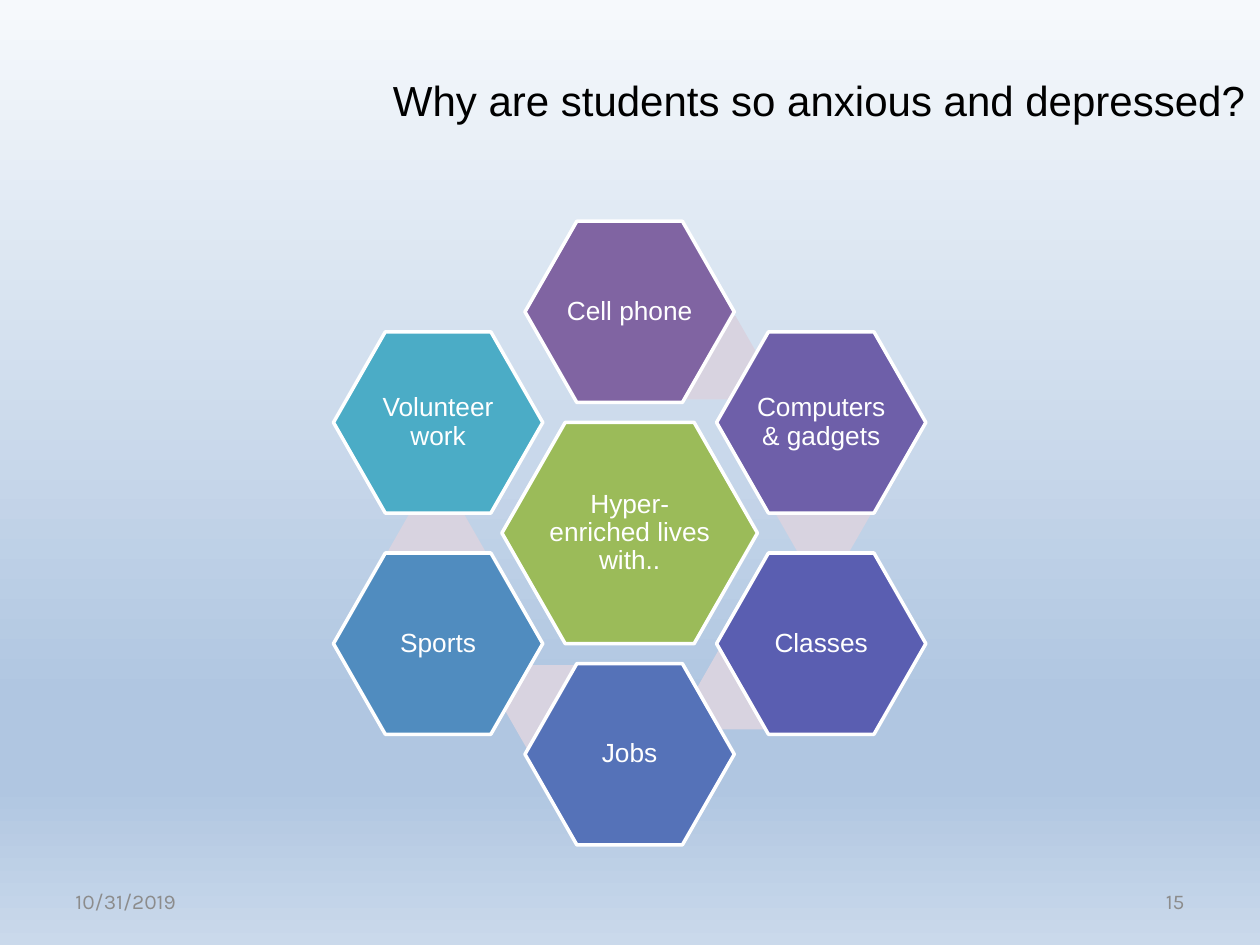
"""Build a slide with a ring of six hexagons around a central theme."""
from math import cos, radians, sin

from lxml import etree
from pptx import Presentation
from pptx import util as u
from pptx.dml import color
from pptx.enum import shapes, text
from pptx.oxml import ns

COLORS = {
    "title": "000000", "white": "FFFFFF", "footer": "8C8C8C",
    "center": "9BBB59", "accent": "D8D3E0",
    "cell": "8064A2", "computers": "6E5FA9", "classes": "5A5EB1",
    "jobs": "5572B8", "sports": "508CBF", "volunteer": "4BACC6",
}
BACKGROUND = [(0, "F6F9FC"), (74, "B0C6E1"), (83, "B0C6E1"), (100, "CAD9EB")]
CENTER_X, CENTER_Y, RADIUS = 359.8, 304.6, 126.4
PETALS = [
    ("Cell phone", "cell"), ("Computers & gadgets", "computers"),
    ("Classes", "classes"), ("Jobs", "jobs"),
    ("Sports", "sports"), ("Volunteer work", "volunteer"),
]
ACCENTS = [(406.4, 204.5), (470.5, 293), (425.9, 393.1), (315, 403.9), (249.5, 314.6)]


def add_text(frame, words, size, font, shade, align):
    frame.word_wrap = True
    frame.vertical_anchor = text.MSO_ANCHOR.MIDDLE
    para = frame.paragraphs[0]
    para.alignment = align
    span = para.add_run()
    span.text = words
    span.font.size = u.Pt(size)
    span.font.name = font
    span.font.color.rgb = color.RGBColor.from_string(COLORS[shade])
    return para


def add_hexagon(page, x, y, width, height, shade, words=None):
    box = page.shapes.add_shape(
        shapes.MSO_SHAPE.HEXAGON, u.Pt(x - width / 2), u.Pt(y - height / 2),
        u.Pt(width), u.Pt(height))
    box.shadow.inherit = False
    box.adjustments[0] = 0.286
    box.fill.solid()
    box.fill.fore_color.rgb = color.RGBColor.from_string(COLORS[shade])
    if words is None:
        box.line.fill.background()
        return
    box.line.color.rgb = color.RGBColor.from_string(COLORS["white"])
    box.line.width = u.Pt(2)
    frame = box.text_frame
    frame.margin_left = frame.margin_right = u.Pt(1.5)
    frame.margin_top = frame.margin_bottom = u.Pt(1.5)
    para = add_text(frame, words, 15, "Arial", "white", text.PP_ALIGN.CENTER)
    para.line_spacing = 0.9


deck = Presentation()
deck.slide_width, deck.slide_height = u.Pt(720), u.Pt(540)
page = deck.slides.add_slide(deck.slide_layouts[5])

fill = page.background.fill
fill.gradient()
fill.gradient_angle = 270
stops = page.background._cSld.find(".//" + ns.qn("a:gsLst"))
for stop in list(stops):
    stops.remove(stop)
for position, shade in BACKGROUND:
    stop = etree.SubElement(stops, ns.qn("a:gs"), pos=str(position * 1000))
    etree.SubElement(stop, ns.qn("a:srgbClr"), val=shade)

title = page.shapes.title
title.left, title.top = u.Pt(192), u.Pt(20)
title.width, title.height = u.Pt(552), u.Pt(74)
add_text(title.text_frame, "Why are students so anxious and depressed?",
         24, "Arial", "title", text.PP_ALIGN.CENTER)

add_hexagon(page, CENTER_X, CENTER_Y, 146, 126.5, "center", "Hyper-enriched lives with..")
for x, y in ACCENTS:
    add_hexagon(page, x, y, 55.2, 47.5, "accent")
for index, (words, shade) in enumerate(PETALS):
    angle = radians(60 * index - 90)
    add_hexagon(page, CENTER_X + RADIUS * cos(angle), CENTER_Y + RADIUS * sin(angle),
                119.6, 103.6, shade, words)

for left, words, align in [(36, "10/31/2019", text.PP_ALIGN.LEFT),
                           (516, "15", text.PP_ALIGN.RIGHT)]:
    box = page.shapes.add_textbox(u.Pt(left), u.Pt(500.5), u.Pt(168), u.Pt(28.8))
    add_text(box.text_frame, words, 12, "Karla", "footer", align)

deck.save("out.pptx")
